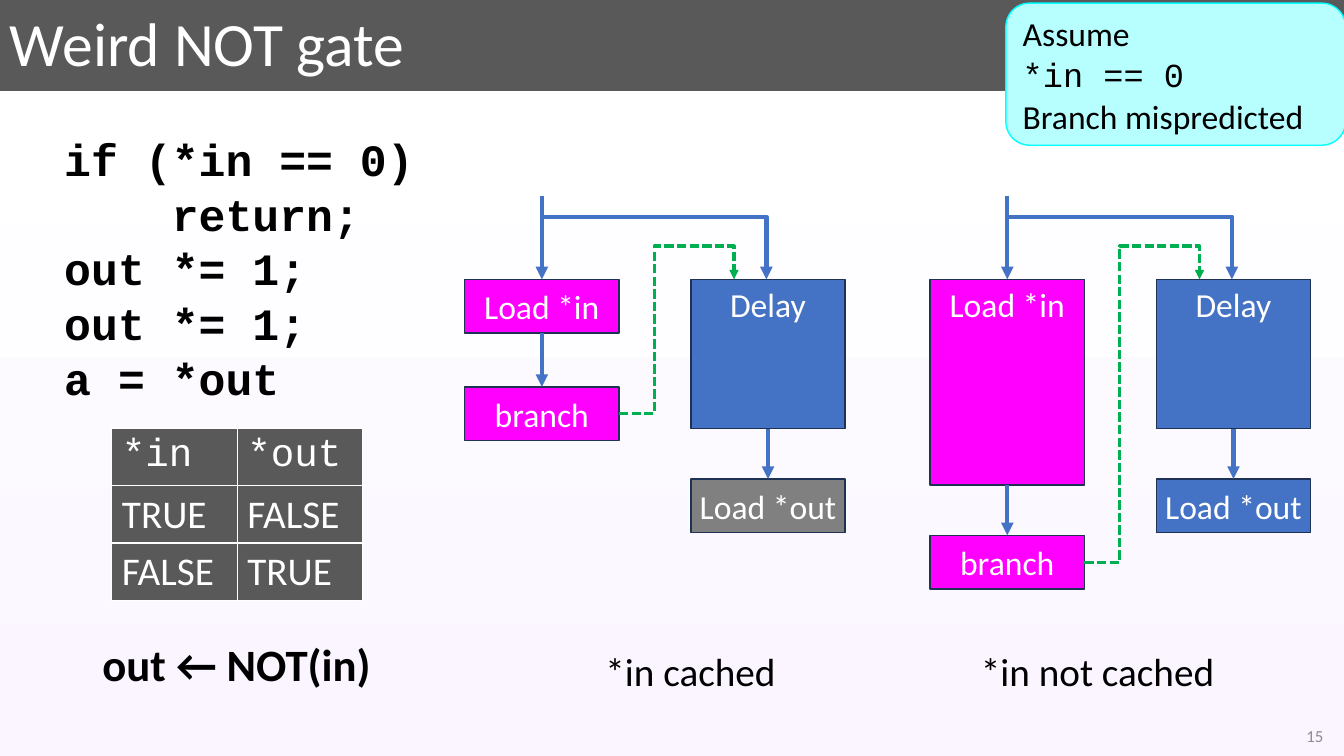
from dataclasses import dataclass
from lxml import etree
from pptx import Presentation
from pptx.dml.color import RGBColor as Rgb
from pptx.enum.dml import MSO_LINE as Dash
from pptx.enum.shapes import MSO_CONNECTOR as Conn, MSO_SHAPE as Shape
from pptx.enum.text import MSO_ANCHOR as Anchor, PP_ALIGN as Align
from pptx.oxml.ns import qn
from pptx.util import Cm, Pt


@dataclass(frozen=True)
class Theme:
    dark: str = "595959"
    white: str = "FFFFFF"
    black: str = "000000"
    lilac: str = "FAF5FF"
    cyan: str = "00FFFF"
    pale: str = "B7FFFF"
    pink: str = "FF00FF"
    blue: str = "4472C4"
    gray: str = "808080"
    faint: str = "8C8C8C"
    green: str = "00B050"
    edge: str = "1E3256"
    sans: str = "Calibri"
    mono: str = "Courier New"
    title: int = 44
    code: int = 32
    body: int = 28
    label: int = 24
    small: int = 12


T = Theme()


# Text: each line is a string, or a (string, font) pair
def write(frame, *lines, size=T.label, font=T.sans, color=T.black, bold=False,
          align=Align.LEFT, lead=None):
    for i, line in enumerate(lines):
        text, face = (line, font) if isinstance(line, str) else line
        para = frame.paragraphs[0] if i == 0 else frame.add_paragraph()
        para.alignment = align
        para.line_spacing = lead
        run = para.add_run()
        run.text = text
        run.font.name, run.font.size, run.font.bold = face, Pt(size), bold
        run.font.color.rgb = Rgb.from_string(color)


def label(slide, box, *lines, anchor=Anchor.TOP, **form):
    frame = slide.shapes.add_textbox(*map(Cm, box)).text_frame
    frame.word_wrap = True
    frame.vertical_anchor = anchor
    write(frame, *lines, **form)


def block(slide, box, *lines, fill, edge=T.edge, kind=Shape.RECTANGLE,
          anchor=Anchor.MIDDLE, inset=0.25, **form):
    shape = slide.shapes.add_shape(kind, *map(Cm, box))
    shape.shadow.inherit = False
    shape.fill.solid()
    shape.fill.fore_color.rgb = Rgb.from_string(fill)
    shape.line.color.rgb = Rgb.from_string(edge)
    shape.line.width = Pt(1)
    frame = shape.text_frame
    frame.word_wrap = True
    frame.vertical_anchor = anchor
    frame.margin_left = frame.margin_right = Cm(inset)
    write(frame, *lines, **form)
    return shape


# Lines and arrows
def point(shape, color=T.blue, width=3, dash=None):
    shape.line.color.rgb = Rgb.from_string(color)
    shape.line.width = Pt(width)
    if dash:
        shape.line.dash_style = dash
    ln = shape.element.spPr.find(qn("a:ln"))
    etree.SubElement(ln, qn("a:tailEnd"), type="triangle")


def arrow(slide, end, start=None, x=0, y=0):
    line = slide.shapes.add_connector(Conn.STRAIGHT, Cm(x), Cm(y), Cm(x), Cm(y))
    if start:
        line.begin_connect(start, 2)
    line.end_connect(end, 0)
    point(line)
    etree.SubElement(line.element.spPr, qn("a:effectLst"))


def route(slide, dots, **form):
    first, *rest = [(Cm(x), Cm(y)) for x, y in dots]
    pen = slide.shapes.build_freeform(*first)
    pen.add_line_segments(rest, close=False)
    path = pen.convert_to_shape()
    path.shadow.inherit = False
    path.fill.background()
    point(path, **form)


# Backdrop: dark title band, then white fading to lilac
def backdrop(slide):
    fill = slide.background.fill
    fill.gradient()
    fill.gradient_angle = 270
    stops = slide.background._cSld.find(".//" + qn("a:gsLst"))
    for stop in list(stops):
        stops.remove(stop)
    for pos, color in ((0, T.dark), (12, T.dark), (12, T.white), (100, T.lilac)):
        stop = etree.SubElement(stops, qn("a:gs"), pos=str(pos * 1000))
        etree.SubElement(stop, qn("a:srgbClr"), val=color)


def header(slide, x, y, w, h):
    label(slide, (x, y, w, h), "Weird NOT gate", size=T.title, color=T.white,
          anchor=Anchor.MIDDLE, lead=0.9)
    block(slide, (x + 25.35, y + 0.08, 8.56, 3.58),
          "Assume", ("*in == 0", T.mono), "Branch mispredicted",
          fill=T.pale, edge=T.cyan, kind=Shape.ROUNDED_RECTANGLE, lead=Pt(29.3))


# Truth table
def truth(slide, x, y, w, h):
    rows = (("*in", "*out"), ("TRUE", "FALSE"), ("FALSE", "TRUE"))
    grid = slide.shapes.add_table(3, 2, Cm(x), Cm(y), Cm(w), Cm(h)).table
    grid.horz_banding = False
    for r, row in enumerate(rows):
        for c, text in enumerate(row):
            cell = grid.cell(r, c)
            write(cell.text_frame, text, size=T.body, color=T.white,
                  font=T.sans if r else T.mono)
            props = cell._tc.get_or_add_tcPr()
            for side in ("lnL", "lnR", "lnT", "lnB"):
                ln = etree.SubElement(props, qn("a:" + side), w=str(Pt(1)))
                solid = etree.SubElement(ln, qn("a:solidFill"))
                etree.SubElement(solid, qn("a:srgbClr"), val=T.white)
            cell.fill.solid()
            cell.fill.fore_color.rgb = Rgb.from_string(T.dark)


# Left column: code, table, result
def logic(slide, x, y):
    label(slide, (x, y, 12.42, 7.09), "if (*in == 0)", "    return;",
          "out *= 1;", "out *= 1;", "a = *out",
          size=T.code, font=T.mono, bold=True, lead=Pt(39))
    truth(slide, x + 1.45, y + 7.62, 6.32, 4.32)
    label(slide, (x + 0.1, y + 12.75, 8.99, 1.63), "out ← NOT(in)",
          size=T.code, bold=True, align=Align.CENTER)


# One race between the load and the delay
def race(slide, x, y, note, shift, load_h, gap, load_at, out_fill):
    w, low, tall = 3.89, 1.35, 3.76
    top, right = y + 2.11, x + 5.7
    turn = top + load_h + gap
    form = dict(color=T.white, align=Align.CENTER)
    load = block(slide, (x, top, w, load_h), "Load *in", fill=T.pink,
                 anchor=load_at, **form)
    delay = block(slide, (right, top, w, tall), "Delay", fill=T.blue,
                  anchor=Anchor.TOP, **form)
    out = block(slide, (right, top + tall + 1.27, w, low), "Load *out",
                fill=out_fill, inset=0.1, **form)
    branch = block(slide, (x, turn, w, low), "branch", fill=T.pink, **form)

    arrow(slide, load, x=x + w / 2, y=y)
    arrow(slide, branch, start=load)
    arrow(slide, out, start=delay)
    mid, fork = x + w / 2, y + 0.53
    route(slide, [(mid, fork), (mid + 5.66, fork), (mid + 5.66, top)])
    side, bend, peak = x + w, turn + low / 2, y + 1.27
    route(slide, [(side, bend), (side + 0.89, bend), (side + 0.89, peak),
                  (side + 2.9, peak), (side + 2.9, top)],
          color=T.green, width=2.25, dash=Dash.SQUARE_DOT)
    label(slide, (x + shift, y + 11.25, 6.86, 1.45), note, size=T.body,
          align=Align.CENTER)


def main():
    deck = Presentation()
    deck.slide_width, deck.slide_height = Cm(33.87), Cm(19.05)
    slide = deck.slides.add_slide(deck.slide_layouts[6])
    backdrop(slide)
    header(slide, 0, 0, 33.6, 2.34)
    logic(slide, 1.37, 3.18)
    race(slide, 11.71, 4.93, "*in cached", 2.26, load_h=1.35, gap=1.36,
         load_at=Anchor.MIDDLE, out_fill=T.gray)
    race(slide, 23.44, 4.93, "*in not cached", 0.79, load_h=5.18, gap=1.27,
         load_at=Anchor.TOP, out_fill=T.blue)
    label(slide, (25.98, 18.03, 7.62, 1.02), "15", size=T.small, color=T.faint,
          align=Align.RIGHT, anchor=Anchor.MIDDLE)
    deck.save("out.pptx")


if __name__ == "__main__":
    main()
